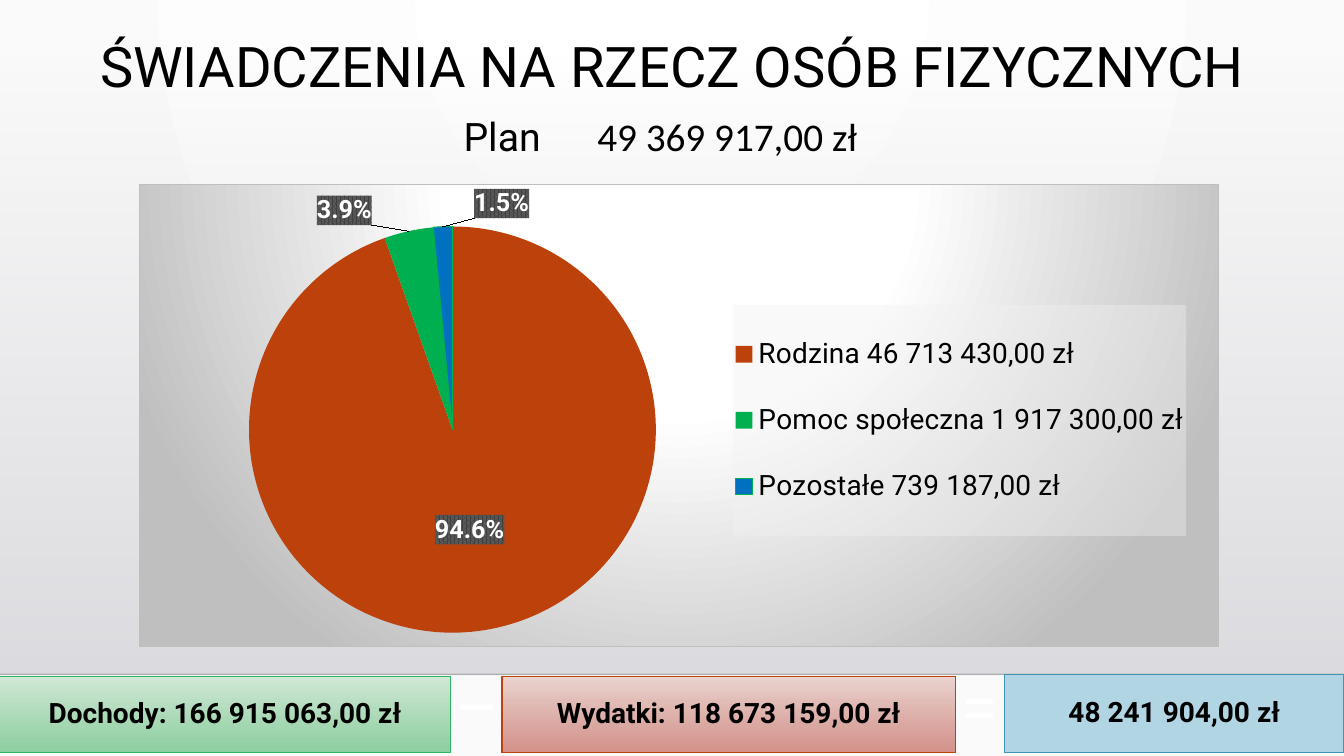
"""Build the slide on benefits paid to individuals, with a pie chart and a budget balance."""
from copy import deepcopy

from pptx import Presentation, util as u
from pptx.chart.data import CategoryChartData
from pptx.dml import fill as f, line as ln
from pptx.dml.color import RGBColor
from pptx.enum import chart as ch, dml, shapes, text as t
from pptx.oxml import parse_xml
from pptx.oxml.ns import nsdecls, qn

NS = nsdecls("c", "a")


def paint(fill, *stops, angle=None, focus=None, alpha=100):
    """Fill with one hex colour, or with a gradient of (position, hex, alpha) stops."""
    fill.solid()
    solid = fill._xPr.find(qn("a:solidFill"))
    if len(stops) == 1:
        fill.fore_color.rgb = RGBColor.from_string(stops[0])
        if alpha < 100:
            solid[0].append(parse_xml(f'<a:alpha {NS} val="{alpha * 1000}"/>'))
        return
    colours = "".join(
        f'<a:gs pos="{place * 1000}"><a:srgbClr val="{colour}">'
        f'<a:alpha val="{opacity * 1000}"/></a:srgbClr></a:gs>'
        for place, colour, opacity in stops)
    if focus:
        edges = " ".join(f'{side}="{share * 1000}"' for side, share in zip("ltrb", focus))
        course = f'<a:path path="circle"><a:fillToRect {edges}/></a:path>'
    else:
        course = f'<a:lin ang="{angle * 60000}" scaled="0"/>'
    solid.getparent().replace(solid, parse_xml(
        f'<a:gradFill {NS} rotWithShape="1"><a:gsLst>{colours}</a:gsLst>{course}</a:gradFill>'))


def write(holder, words, size=20, font="Roboto", colour="000000", bold=False, align=None,
          spacing=None, wrap=True, anchor=t.MSO_ANCHOR.TOP, inset=None):
    """Put one formatted paragraph into a shape."""
    frame = holder.text_frame
    frame.word_wrap = wrap
    frame.auto_size = t.MSO_AUTO_SIZE.NONE
    frame.vertical_anchor = anchor
    if inset is not None:
        frame.margin_left = frame.margin_right = u.Inches(inset)
        frame.margin_top = frame.margin_bottom = u.Inches(inset)
    paragraph = frame.paragraphs[0]
    paragraph.alignment = align
    paragraph.line_spacing = spacing
    run = paragraph.add_run()
    run.text = words
    run.font.size, run.font.name, run.font.bold = u.Pt(size), font, bold
    paint(run.font.fill, colour)


deck = Presentation()
deck.slide_width, deck.slide_height = u.Inches(13.33), u.Inches(7.5)
col, row = deck.slide_width / 100, deck.slide_height / 100
slide = deck.slides.add_slide(deck.slide_layouts[5])
CENTER, MIDDLE = t.PP_ALIGN.CENTER, t.MSO_ANCHOR.MIDDLE

grid = {
    "band": (0, 6.8, 100, 82.4),
    "title": (0, 4.13, 100, 10.13),
    "plan": (33.75, 14.27, 8, 7.6),
    "amount": (43.7, 14.27, 21.8, 7.6),
    "benefits": (10.35, 24.4, 80.35, 61.2),
    "spending": (37.35, 89.47, 33.75, 10.13),
    "minus": (32.3, 87.2, 6.45, 12.13),
    "equals": (69.7, 87.2, 6.45, 12.13),
    "balance": (74.75, 89.2, 25.25, 10.4),
    "income": (0, 89.47, 33.5, 10.13),
}
places = {part: [int(share * unit) for share, unit in zip(at, (col, row, col, row))]
          for part, at in grid.items()}

paint(slide.background.fill, (0, "FFFFFF", 100), (100, "FAFAFA", 100), focus=(43, 0, 43, 100))
band = slide.shapes.add_shape(shapes.MSO_SHAPE.RECTANGLE, *places["band"])
band.shadow.inherit = False
band.line.fill.background()
paint(band.fill, (0, "DCDCE0", 0), (100, "DEDEE2", 100), angle=90)
floor = int(89.2 * row)
horizon = slide.shapes.add_connector(
    shapes.MSO_CONNECTOR.STRAIGHT, 0, floor, deck.slide_width, floor)
horizon.line.width = u.Pt(1)
paint(horizon.line.fill, "000001", alpha=20)
horizon._element.spPr.append(parse_xml(f"<a:effectLst {NS}/>"))
for depth, backdrop in enumerate((band, horizon), 2):
    slide.shapes._spTree.insert(depth, backdrop._element)

title = slide.shapes.title
title.left, title.top, title.width, title.height = places["title"]
write(title, "ŚWIADCZENIA NA RZECZ OSÓB FIZYCZNYCH", size=40, align=CENTER, spacing=0.9,
      anchor=MIDDLE)
write(slide.shapes.add_textbox(*places["plan"]), "Plan", size=28)
write(slide.shapes.add_textbox(*places["amount"]), "49 369 917,00 zł", size=28,
      font="Calibri", wrap=False)

slices = [("Rodzina 46 713 430,00 zł", 94.6, "BC410A"),
          ("Pomoc społeczna 1 917 300,00 zł", 3.9, "00B050"),
          ("Pozostałe 739 187,00 zł", 1.5, "0070C0")]
data = CategoryChartData()
data.categories = [name for name, share, colour in slices]
data.add_series("Series 1", [share for name, share, colour in slices])
chart = slide.shapes.add_chart(ch.XL_CHART_TYPE.PIE, *places["benefits"], data).chart
chart.has_title = False
chart.has_legend = True
pie = chart.plots[0]
pie.vary_by_categories = True
series = pie.series[0]
for index, (name, share, colour) in enumerate(slices):
    paint(series.points[index].format.fill, colour)
rest = series.points[2].format.line
rest.width = u.Pt(0.75)
paint(rest.fill, "00B050")

legend = chart.legend
legend.position = ch.XL_LEGEND_POSITION.RIGHT
legend.include_in_layout = False
labels = series.data_labels
labels.number_format, labels.number_format_is_linked = "0.0%", False
labels.show_percentage, labels.show_value = True, False
labels.position = ch.XL_LABEL_POSITION.CENTER
for font, size, colour in ((chart.font, 18, "000000"), (legend.font, 20, "000000"),
                           (labels.font, 18, "FFFFFF")):
    font.name, font.size = "Roboto", u.Pt(size)
    paint(font.fill, colour)
labels.font.bold = True

space = chart._chartSpace
overlay = legend._element.find(qn("c:overlay"))
label_list = labels._element
panels = []
for neighbour in (space.chart, overlay, label_list.find(qn("c:numFmt"))):
    panel = parse_xml(f"<c:spPr {NS}/>")
    neighbour.addnext(panel)
    panels.append(panel)
chart_fill, legend_fill, label_fill = map(f.FillFormat.from_fill_parent, panels)
paint(chart_fill, (0, "FFFFFF", 100), (39, "FFFFFF", 100), (100, "BFBFBF", 100),
      focus=(50, -80, 50, 180))
border = ln.LineFormat(panels[0])
border.width = u.Pt(0.75)
paint(border.fill, "BFBFBF")
paint(legend_fill, "F2F2F2", alpha=39)
label_fill.patterned()
label_fill.pattern = dml.MSO_PATTERN.PERCENT_75
label_fill.fore_color.rgb = RGBColor.from_string("404040")
label_fill.back_color.rgb = RGBColor.from_string("595959")

plot_area = space.chart.plotArea
for unset in plot_area.findall(qn("c:layout")):
    plot_area.remove(unset)
for following, target, frame in ((plot_area[0], '<c:layoutTarget val="inner"/>',
                                  (0.1, 0.09, 0.38, 0.88)),
                                 (overlay, "", (0.55, 0.26, 0.42, 0.5))):
    sizes = "".join(f'<c:{key} val="{share}"/>' for key, share in zip("xywh", frame))
    following.addprevious(parse_xml(
        f'<c:layout {NS}><c:manualLayout>{target}<c:xMode val="edge"/><c:yMode val="edge"/>'
        f"{sizes}</c:manualLayout></c:layout>"))

label_style = [part for part in label_list if part.tag != qn("c:showLeaderLines")]
for depth, (index, across, down) in enumerate(((1, -0.08, -0.26), (2, 0.05, -0.27))):
    moved = parse_xml(
        f'<c:dLbl {NS}><c:idx val="{index}"/><c:layout><c:manualLayout><c:x val="{across}"/>'
        f'<c:y val="{down}"/></c:manualLayout></c:layout></c:dLbl>')
    moved.extend(deepcopy(label_style))
    label_list.insert(depth, moved)

red = ((0, "EBD4D1", 100), (100, "D18A81", 92))
green = ((0, "D2E9D8", 100), (100, "85CC98", 92))
for part, words, colours, edge in (
        ("spending", "Wydatki: 118 673 159,00 zł", red, "BC410A"),
        ("balance", "48 241 904,00 zł", ("B2D5E3",), "4294B6"),
        ("income", "Dochody: 166 915 063,00 zł", green, "2CB663")):
    box = slide.shapes.add_shape(shapes.MSO_SHAPE.RECTANGLE, *places[part])
    box.shadow.inherit = False
    paint(box.fill, *colours, angle=90)
    box.line.width = u.Pt(0.75)
    paint(box.line.fill, edge)
    write(box, words, bold=True, align=CENTER, spacing=0.9, anchor=MIDDLE, inset=0.27)
for part, sign in (("minus", "–"), ("equals", "=")):
    write(slide.shapes.add_textbox(*places[part]), sign, size=48, colour="FFFFFF", align=CENTER)

deck.save("out.pptx")
